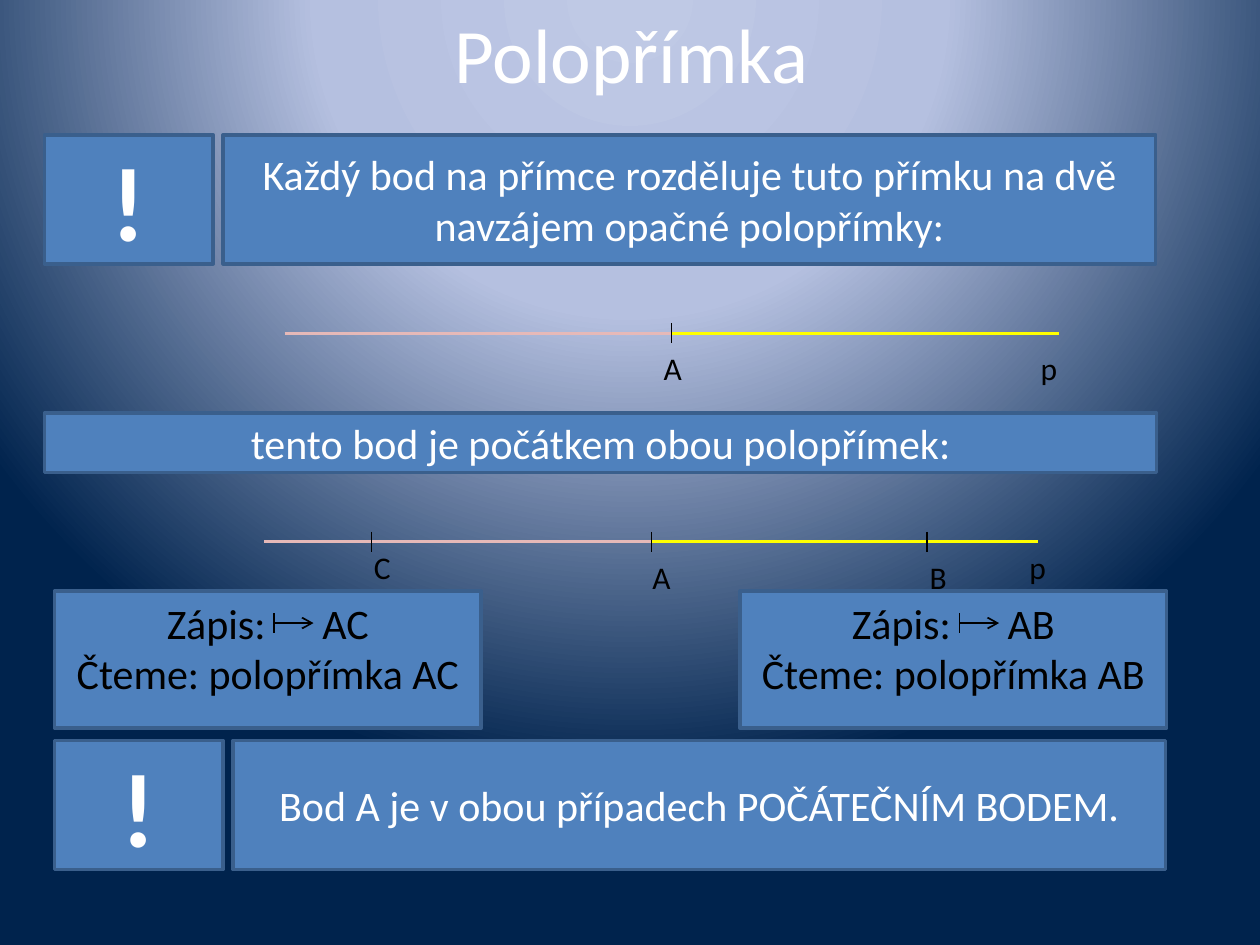
import pptx
import pptx.dml.color
import pptx.enum.shapes
import pptx.enum.text
import pptx.oxml
import pptx.oxml.ns
import pptx.util

Cm = pptx.util.Cm
Pt = pptx.util.Pt
ALIGN = pptx.enum.text.PP_ALIGN
ANCHOR = pptx.enum.text.MSO_ANCHOR
SIZE = pptx.enum.text.MSO_AUTO_SIZE
KIND = pptx.enum.shapes.MSO_SHAPE
LINK = pptx.enum.shapes.MSO_CONNECTOR

HUES = {
    "white": "FFFFFF", "black": "000000", "blue": "4F81BD", "edge": "3A5F8C",
    "yellow": "FFFF00", "pink": "E6B9B8",
    "glow": "BFC9E5", "haze": "B5C0E0", "navy": "00234D",
}
NS = pptx.oxml.ns.nsdecls("a", "p")
RAY = 7.8     # length of each half line
TICK = 0.2    # half the height of a point mark


def color(name):
    return pptx.dml.color.RGBColor.from_string(HUES[name])


def write(para, text, size=24, hue="white", bold=False, align=ALIGN.CENTER, gap=0):
    """Add one run; gap is extra space in points after each letter."""
    para.alignment = align
    run = para.add_run()
    run.text = text
    font = run.font
    font.name, font.size, font.bold = "Calibri", Pt(size), bold
    font.color.rgb = color(hue)
    if gap:
        run._r.get_or_add_rPr().set("spc", str(gap * 100))


class Board:
    font_mark = 18

    def __init__(self, slide):
        self.slide = slide
        self.shapes = slide.shapes

    def back(self, stops):
        marks = "".join(
            f'<a:gs pos="{pos * 1000}"><a:srgbClr val="{HUES[hue]}"/></a:gs>'
            for pos, hue in stops)
        node = pptx.oxml.parse_xml(
            f'<p:bg {NS}><p:bgPr><a:gradFill rotWithShape="1"><a:gsLst>{marks}</a:gsLst>'
            '<a:path path="circle"><a:fillToRect l="50000" t="-80000" r="50000" b="180000"/>'
            '</a:path></a:gradFill><a:effectLst/></p:bgPr></p:bg>')
        self.slide._element.cSld.insert(0, node)

    def title(self, text, x, y, w, h):
        shape = self.shapes.title
        shape.left, shape.top, shape.width, shape.height = map(Cm, (x, y, w, h))
        frame = shape.text_frame
        frame.auto_size = SIZE.NONE
        frame.vertical_anchor = ANCHOR.TOP
        write(frame.paragraphs[0], text, size=44)

    def box(self, x, y, w, h, text="", anchor=ANCHOR.MIDDLE, **style):
        shape = self.shapes.add_shape(KIND.RECTANGLE, *map(Cm, (x, y, w, h)))
        shape.shadow.inherit = False
        shape.fill.solid()
        shape.fill.fore_color.rgb = color("blue")
        shape.line.color.rgb = color("edge")
        shape.line.width = Pt(2)
        frame = shape.text_frame
        frame.word_wrap = True
        frame.vertical_anchor = anchor
        if text:
            write(frame.paragraphs[0], text, **style)
        return frame

    def line(self, x1, y1, x2, y2, hue="black", width=0.75, arrow=False):
        link = self.shapes.add_connector(LINK.STRAIGHT, *map(Cm, (x1, y1, x2, y2)))
        link.line.color.rgb = color(hue)
        link.line.width = Pt(width)
        if arrow:
            link.line._get_or_add_ln().append(
                pptx.oxml.parse_xml(f'<a:tailEnd {NS} type="arrow"/>'))
        link._element.spPr.append(pptx.oxml.parse_xml(f"<a:effectLst {NS}/>"))

    def tick(self, x, y, width=0.75):
        self.line(x, y - TICK, x, y + TICK, width=width)

    def label(self, text, x, y):
        frame = self.shapes.add_textbox(*map(Cm, (x, y, 0.6, 1.02))).text_frame
        frame.word_wrap = True
        frame.auto_size = SIZE.SHAPE_TO_FIT_TEXT
        write(frame.paragraphs[0], text, size=self.font_mark, hue="black", align=ALIGN.LEFT)

    def rays(self, x, y, points):
        """Two opposite half lines from x, with a mark at each given point."""
        self.line(x, y, x + RAY, y, "yellow", 1.5)
        self.line(x - RAY, y, x, y, "pink", 1.5)
        for point in points:
            self.tick(point, y)

    def alert(self, x, y, text):
        self.box(x, y, 3.4, 2.6, "!", size=60, bold=True)
        self.box(x + 3.6, y, 18.8, 2.6, text)

    def note(self, x, y, name):
        """Notation of a half line, with its symbol drawn in the gap."""
        frame = self.box(x, y, 8.6, 2.76, "Zápis:", ANCHOR.TOP, hue="black")
        first = frame.paragraphs[0]
        write(first, " ", hue="black", gap=27)
        write(first, name, hue="black")
        write(frame.add_paragraph(), f"Čteme: polopřímka {name}", hue="black")
        mark, mid = x + 4.42, y + 0.64
        self.line(mark, mid, mark + 0.8, mid, width=1, arrow=True)
        self.tick(mark, mid, width=1)


def main():
    deck = pptx.Presentation()
    deck.slide_width, deck.slide_height = Cm(25.4), Cm(19.05)
    board = Board(deck.slides.add_slide(deck.slide_layouts[5]))
    board.back([(0, "glow"), (40, "haze"), (100, "navy")])
    board.title("Polopřímka", 1.3, 0, 22.86, 3.18)

    board.alert(0.9, 2.72, "Každý bod na přímce rozděluje tuto přímku na dvě "
                           "navzájem opačné polopřímky:")
    board.rays(13.54, 6.72, [13.54])
    board.box(0.9, 8.33, 22.42, 1.2, "tento bod je počátkem obou polopřímek:")
    board.rays(13.13, 10.92, [7.49, 13.13, 18.69])

    for x, name in ((1.1, "AC"), (14.92, "AB")):
        board.note(x, 11.92, name)
    board.alert(1.1, 14.93, "Bod A je v obou případech POČÁTEČNÍM BODEM.")

    for text, x, y in (("A", 13.13, 6.91), ("p", 20.73, 6.91),
                       ("C", 7.29, 10.92), ("A", 12.9, 11.13),
                       ("B", 18.49, 11.13), ("p", 20.5, 10.92)):
        board.label(text, x, y)
    deck.save("out.pptx")


if __name__ == "__main__":
    main()
